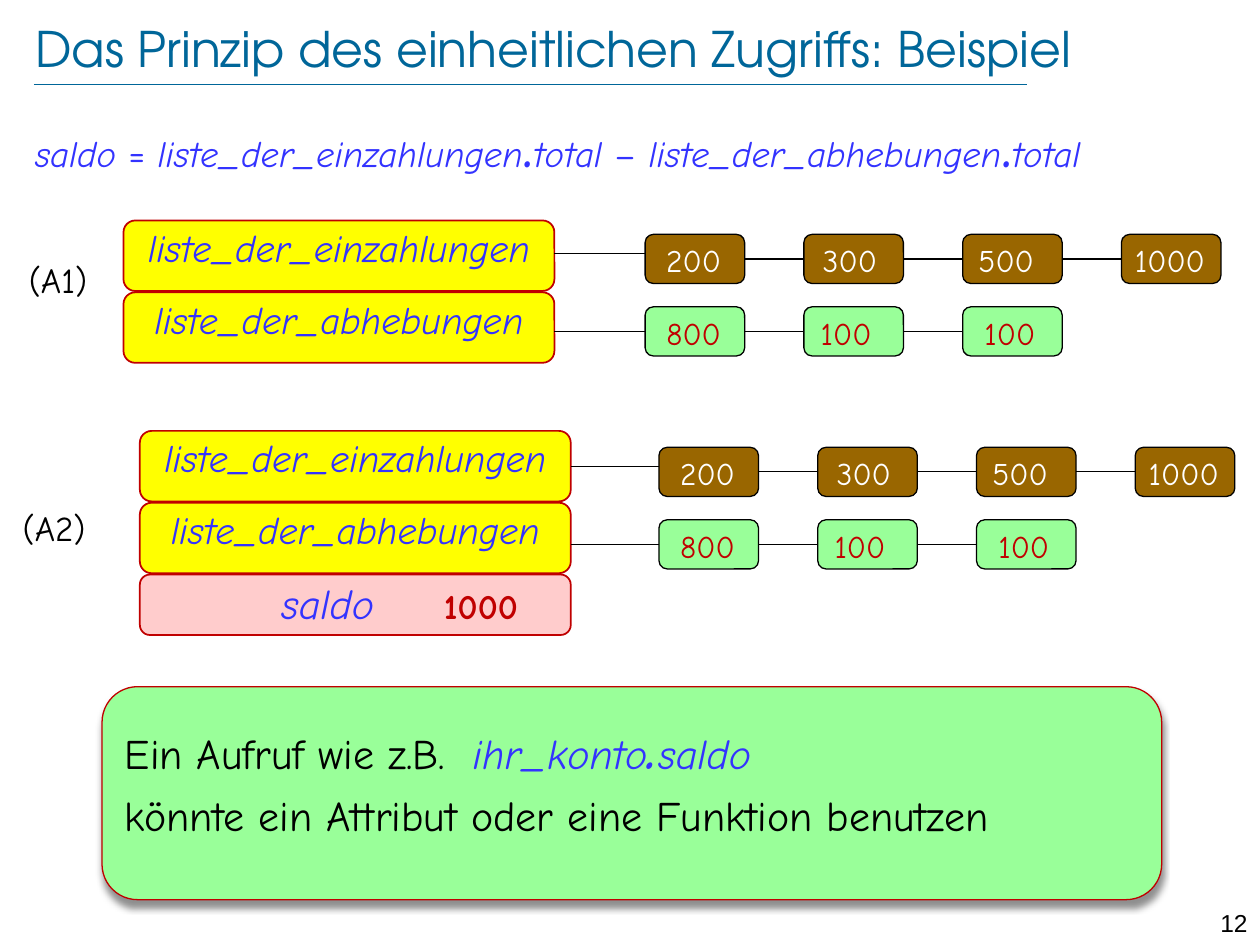
import pptx
import pptx.util
import pptx.dml.color
import pptx.enum.shapes
import pptx.enum.text
import pptx.oxml
from pptx.oxml.ns import nsdecls, qn

Inches, Pt = pptx.util.Inches, pptx.util.Pt
ALIGN, ANCHOR = pptx.enum.text.PP_ALIGN, pptx.enum.text.MSO_ANCHOR

COLORS = {
    "petrol": "006699", "blue": "3333FF", "red": "C00000", "black": "000000",
    "white": "FFFFFF", "brown": "996600", "green": "99FF99",
    "yellow": "FFFF00", "pink": "FFCCCC",
}
HAND = "Comic Neue"
VAR = {"color": "blue", "italic": True}

TITLE = "Das Prinzip des einheitlichen Zugriffs: Beispiel"
PAGE = "12"
FORMULA = [
    ("saldo ", VAR), ("= ", {"color": "blue"}),
    ("liste_der_einzahlungen", VAR), (".", {"color": "blue", "size": 40}),
    ("total", VAR), (" – ", {"color": "blue"}),
    ("liste_der_abhebungen", VAR), (".", {"color": "blue", "size": 40}),
    ("total", VAR),
]
SUMMARY = [
    [("Ein Aufruf wie z.B.\t", {}), ("ihr_konto", VAR),
     (".", {**VAR, "size": 44}), ("saldo", VAR)],
    [("könnte ein Attribut oder eine Funktion benutzen", {})],
]
BALANCE = [("\tsaldo\t", VAR),
           ("1000", {"color": "red", "size": 20, "bold": True})]

# Each entry: value and how far it sits left of its node's centre.
DEPOSITS = [("200", 0.01), ("300", 0.03), ("500", 0.05), ("1000", 0.01)]
WITHDRAWALS = [("800", 0.01), ("100", 0.06), ("100", 0.02)]
LISTS = [
    ("liste_der_einzahlungen", DEPOSITS, "brown", "white"),
    ("liste_der_abhebungen", WITHDRAWALS, "green", "red"),
]
VARIANTS = [
    {"name": "(A1)", "name_at": (0.13, 2.0), "inset": 0.1, "labels_at": (0.98, 1.75),
     "nodes_at": (5.12, 1.86), "link_y": (2.01, 2.63), "balance": None},
    {"name": "(A2)", "name_at": (0.18, 4.02), "inset": 0, "labels_at": (1.11, 3.42),
     "nodes_at": (5.23, 3.55), "link_y": (3.70, 4.32), "balance": BALANCE},
]
LABEL_W, LABEL_H, LABEL_STEP, BALANCE_H = 3.42, 0.56, 0.57, 0.48
NODE_W, NODE_H, NODE_STEP, ROW_STEP = 0.79, 0.39, 1.26, 0.575


def rgb(name):
    return pptx.dml.color.RGBColor.from_string(COLORS[name])


def write(frame, paragraphs, size=20, color="black", font=HAND, align=ALIGN.LEFT,
          anchor=ANCHOR.TOP, margins=(0.1, 0.05, 0.1, 0.05), wrap=True,
          line_spacing=None, gap=0, tabs=()):
    """Fill a frame with paragraphs, each a string or a list of (text, overrides)."""
    frame.auto_size = pptx.enum.text.MSO_AUTO_SIZE.NONE
    frame.word_wrap = wrap
    frame.vertical_anchor = anchor
    (frame.margin_left, frame.margin_top,
     frame.margin_right, frame.margin_bottom) = map(Inches, margins)
    for index, runs in enumerate(paragraphs):
        paragraph = frame.add_paragraph() if index else frame.paragraphs[0]
        if tabs:
            stops = "".join(f'<a:tab pos="{Inches(t)}" algn="l"/>' for t in tabs)
            paragraph._p.get_or_add_pPr().append(pptx.oxml.parse_xml(
                f"<a:tabLst {nsdecls('a')}>{stops}</a:tabLst>"))
        paragraph.alignment = align
        if line_spacing:
            paragraph.line_spacing = line_spacing
        if index:
            paragraph.space_before = Pt(gap)
        for text, style in ([(runs, {})] if isinstance(runs, str) else runs):
            run = paragraph.add_run()
            run.text = text
            run.font.name = font
            run.font.size = Pt(style.get("size", size))
            run.font.bold = style.get("bold", False)
            run.font.italic = style.get("italic", False)
            run.font.color.rgb = rgb(style.get("color", color))


def add_text(slide, box, paragraphs, **style):
    write(slide.shapes.add_textbox(*map(Inches, box)).text_frame, paragraphs, **style)


def add_box(slide, box, fill, line, width, paragraphs, **style):
    shape = slide.shapes.add_shape(
        pptx.enum.shapes.MSO_SHAPE.ROUNDED_RECTANGLE, *map(Inches, box))
    shape.shadow.inherit = False
    shape.fill.solid()
    shape.fill.fore_color.rgb = rgb(fill)
    shape.line.color.rgb = rgb(line)
    shape.line.width = Pt(width)
    write(shape.text_frame, paragraphs, **style)
    return shape


def add_line(slide, start, end, color="black", width=0.75):
    line = slide.shapes.add_connector(
        pptx.enum.shapes.MSO_CONNECTOR.STRAIGHT, *map(Inches, start + end))
    line.line.color.rgb = rgb(color)
    line.line.width = Pt(width)
    line._element.spPr.append(pptx.oxml.parse_xml(f"<a:effectLst {nsdecls('a')}/>"))
    return line


def add_chain(slide, left, top, values, fill, color):
    """Draw linked nodes in a row and return the first one."""
    nodes = []
    for index, (value, shift) in enumerate(values):
        x = left + index * NODE_STEP
        nodes.append(add_box(
            slide, (x, top, NODE_W, NODE_H), fill, "black", 0.75, [value], size=18,
            color=color, align=ALIGN.CENTER, anchor=ANCHOR.MIDDLE, wrap=False,
            margins=(0, 0.02, 2 * shift, 0)))
    middle = top + NODE_H / 2
    for index, (node, following) in enumerate(zip(nodes, nodes[1:])):
        x = left + index * NODE_STEP
        link = add_line(slide, (x + NODE_W, middle), (x + NODE_STEP, middle))
        link.begin_connect(node, 3)
        link.end_connect(following, 1)
    return nodes[0]


def add_variant(slide, variant):
    add_text(slide, (*variant["name_at"], 0.81, 0.43), [variant["name"]], wrap=False,
             margins=(variant["inset"], variant["inset"] / 2, 0, 0.05))
    label_x, label_y = variant["labels_at"]
    node_x, node_y = variant["nodes_at"]
    for row, (name, values, fill, color) in enumerate(LISTS):
        label_top = label_y + row * LABEL_STEP
        node_top = node_y + row * ROW_STEP
        label = add_box(slide, (label_x, label_top, LABEL_W, LABEL_H), "yellow", "red", 1,
                        [[(name, VAR)]], size=22, align=ALIGN.CENTER, margins=(0,) * 4)
        first = add_chain(slide, node_x, node_top, values, fill, color)
        y = variant["link_y"][row]
        link = add_line(slide, (label_x + LABEL_W, y), (node_x, y))
        if abs(y - label_top - LABEL_H / 2) < 0.01:
            link.begin_connect(label, 3)
        if abs(y - node_top - NODE_H / 2) < 0.01:
            link.end_connect(first, 1)
    if variant["balance"]:
        top = label_y + len(LISTS) * LABEL_STEP
        add_box(slide, (label_x, top, LABEL_W, BALANCE_H), "pink", "red", 1,
                [variant["balance"]], size=24, margins=(0,) * 4, tabs=(1.1, 2.39))


def add_summary(slide):
    summary = add_box(slide, (0.81, 5.45, 8.41, 1.69), "green", "red", 0.75, SUMMARY,
                      size=24, line_spacing=0.9, gap=5, tabs=(2.76,))
    summary._element.spPr.find(qn("a:effectLst")).append(pptx.oxml.parse_xml(
        f'<a:outerShdw {nsdecls("a")} blurRad="{Pt(4)}" dist="{Pt(4)}" dir="5400000" '
        f'rotWithShape="0"><a:srgbClr val="{COLORS["black"]}">'
        '<a:alpha val="43000"/></a:srgbClr></a:outerShdw>'))


def main():
    deck = pptx.Presentation()
    deck.slide_width, deck.slide_height = Inches(10), Inches(7.5)
    slide = deck.slides.add_slide(deck.slide_layouts[5])
    title = slide.shapes.title
    title.left, title.top, title.width, title.height = map(Inches, (0.28, 0.13, 9.01, 0.5))
    write(title.text_frame, [TITLE], size=28, color="petrol", font="TeX Gyre Adventor",
          anchor=ANCHOR.MIDDLE, margins=(0,) * 4)
    add_line(slide, (0.27, 0.67), (8.15, 0.67), color="petrol", width=0.25)
    add_text(slide, (9.45, 7.16, 0.55, 0.24), [PAGE], size=14, font="Arial",
             align=ALIGN.RIGHT)
    add_text(slide, (0.18, 0.96, 9.73, 0.55), [FORMULA], size=21, line_spacing=0.6)
    add_summary(slide)
    for variant in VARIANTS:
        add_variant(slide, variant)
    deck.save("out.pptx")


if __name__ == "__main__":
    main()
